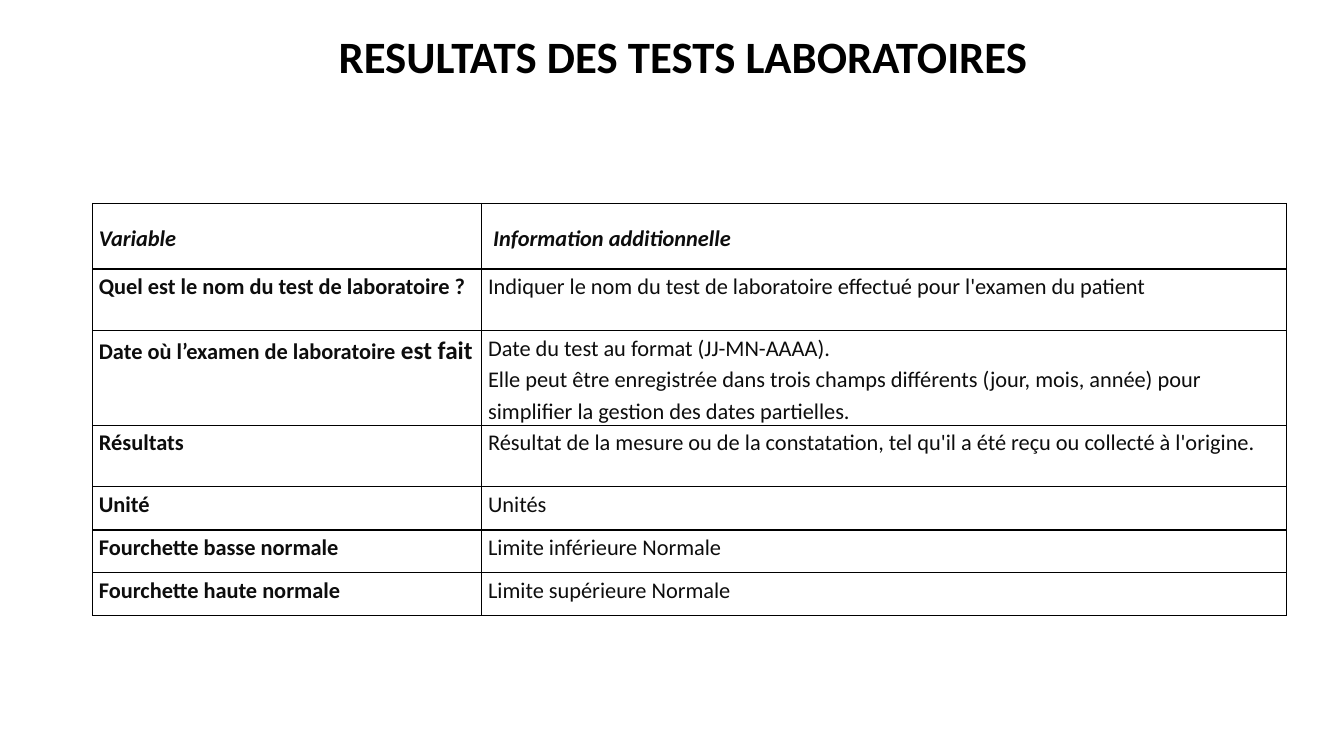
from dataclasses import dataclass

from lxml import etree
from pptx import Presentation
from pptx.dml.color import RGBColor
from pptx.enum.text import MSO_ANCHOR, PP_ALIGN
from pptx.oxml.ns import qn
from pptx.util import Pt

CENTER = PP_ALIGN.CENTER
TOP, MIDDLE = MSO_ANCHOR.TOP, MSO_ANCHOR.MIDDLE


@dataclass(frozen=True)
class Theme:
    font: str = "Calibri"
    title: str = "000000"
    body: str = "0D0D0D"
    border: str = "000000"
    title_size: int = 32
    body_size: int = 16
    accent_size: int = 18
    border_width: int = 1
    line_spacing: float = 1.15
    cell_inset: float = 4.5


THEME = Theme()

COLUMN_WIDTHS = [278, 574.5]
ROW_HEIGHTS = [46.8, 44, 66.5, 44, 31, 30.5, 30.5]
HEADER = ["Variable", " Information additionnelle"]
VARIABLES = [
    ("Quel est le nom du test de laboratoire ?", "",
     ["Indiquer le nom du test de laboratoire effectué pour l'examen du patient"]),
    ("Date où l’examen de laboratoire ", "est fait",
     ["Date du test au format (JJ-MN-AAAA).",
      "Elle peut être enregistrée dans trois champs différents (jour, mois, année) "
      "pour simplifier la gestion des dates partielles."]),
    ("Résultats", "",
     ["Résultat de la mesure ou de la constatation, tel qu'il a été reçu ou collecté à l'origine."]),
    ("Unité", "", ["Unités"]),
    ("Fourchette basse normale", "", ["Limite inférieure Normale"]),
    ("Fourchette haute normale", "", ["Limite supérieure Normale"]),
]


def add_run(p, text, size=THEME.body_size, color=THEME.body, bold=False, italic=False):
    r = p.add_run()
    r.text = text
    r.font.name = THEME.font
    r.font.size = Pt(size)
    r.font.bold = bold
    r.font.italic = italic
    r.font.color.rgb = RGBColor.from_string(color)


def add_title(s, text, left, top, width, height):
    tf = s.shapes.add_textbox(Pt(left), Pt(top), Pt(width), Pt(height)).text_frame
    tf.word_wrap = True
    tf.vertical_anchor = MIDDLE
    p = tf.paragraphs[0]
    p.alignment = CENTER
    add_run(p, text, size=THEME.title_size, color=THEME.title, bold=True)


def set_borders(cell):
    tc_pr = cell._tc.get_or_add_tcPr()
    for i, side in enumerate(("lnL", "lnR", "lnT", "lnB")):
        ln = etree.Element(qn(f"a:{side}"), w=str(Pt(THEME.border_width)))
        fill = etree.SubElement(ln, qn("a:solidFill"))
        etree.SubElement(fill, qn("a:srgbClr"), val=THEME.border)
        tc_pr.insert(i, ln)


def format_cell(cell, anchor):
    cell.fill.background()
    set_borders(cell)
    cell.margin_left = cell.margin_right = Pt(THEME.cell_inset)
    cell.margin_top = cell.margin_bottom = Pt(0)
    cell.vertical_anchor = anchor


def fill_cell(cell, paragraphs, anchor=TOP, accent="", **fmt):
    format_cell(cell, anchor)
    tf = cell.text_frame
    for i, text in enumerate(paragraphs):
        p = tf.add_paragraph() if i else tf.paragraphs[0]
        p.line_spacing = THEME.line_spacing
        add_run(p, text, **fmt)
    if accent:
        add_run(p, accent, size=THEME.accent_size, **fmt)


def add_variable_table(s, left, top):
    table = s.shapes.add_table(
        len(ROW_HEIGHTS), len(COLUMN_WIDTHS), Pt(left), Pt(top),
        Pt(sum(COLUMN_WIDTHS)), Pt(sum(ROW_HEIGHTS))).table
    table.first_row = table.horz_banding = False
    for column, width in zip(table.columns, COLUMN_WIDTHS):
        column.width = Pt(width)
    for row, height in zip(table.rows, ROW_HEIGHTS):
        row.height = Pt(height)
    for j, text in enumerate(HEADER):
        fill_cell(table.cell(0, j), [text], anchor=MIDDLE, bold=True, italic=True)
    for i, (name, accent, details) in enumerate(VARIABLES, start=1):
        fill_cell(table.cell(i, 0), [name], accent=accent, bold=True)
        fill_cell(table.cell(i, 1), details)


def main():
    prs = Presentation()
    prs.slide_width, prs.slide_height = Pt(960), Pt(540)
    s = prs.slides.add_slide(prs.slide_layouts[6])
    add_variable_table(s, 66.2, 145.4)
    add_title(s, "RESULTATS DES TESTS LABORATOIRES", 164, 15, 648, 50)
    prs.save("out.pptx")


if __name__ == "__main__":
    main()
